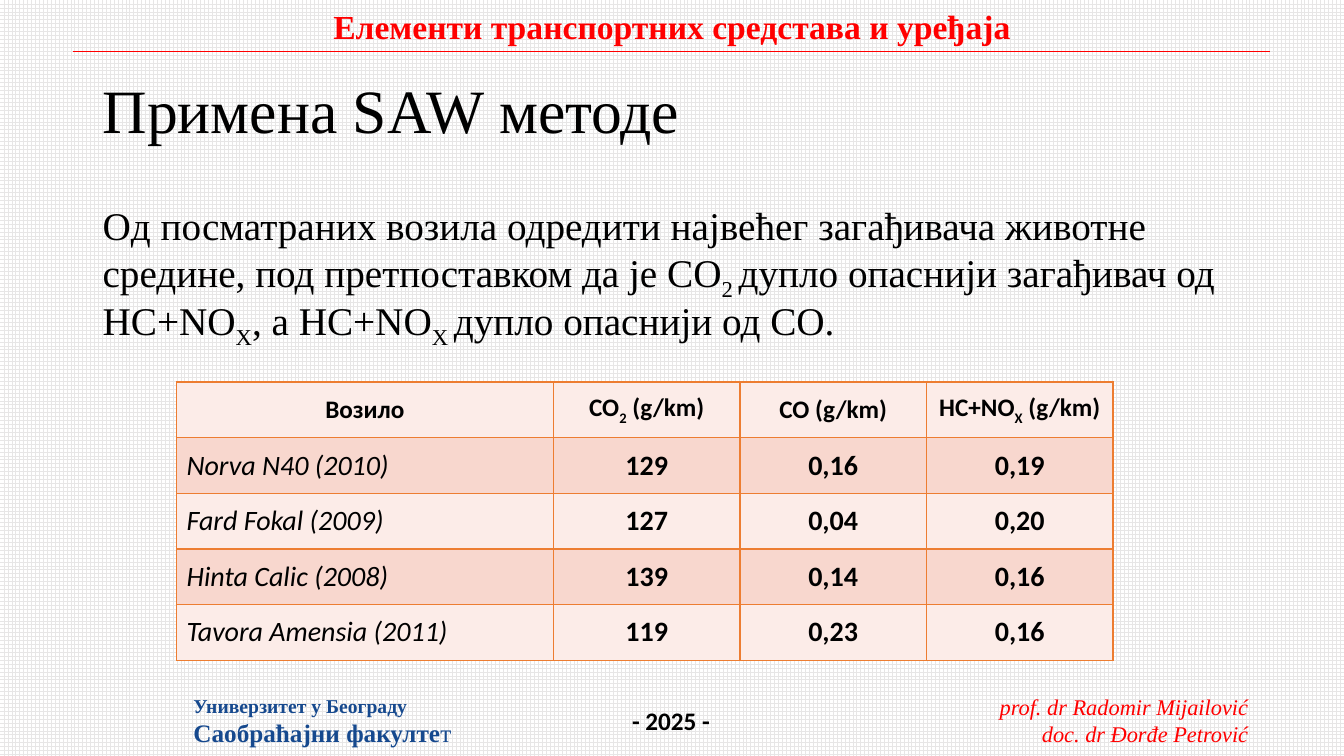
from dataclasses import dataclass, replace

from lxml import etree
from pptx import Presentation
from pptx import util as u
from pptx.dml.color import RGBColor
from pptx.enum import dml, shapes, text
from pptx.oxml import ns

WIDTH, HEIGHT = u.Inches(13.33), u.Inches(7.5)
LEFT, CENTER, RIGHT = text.PP_ALIGN.LEFT, text.PP_ALIGN.CENTER, text.PP_ALIGN.RIGHT


@dataclass(frozen=True)
class Style:
    size: int
    color: str = "000000"
    font: str = "Times New Roman"
    bold: bool = False
    italic: bool = False


class Theme:
    red = "FF0000"
    grid, paper = "E7E6E6", "FFFFFF"
    border = "ED7D31"
    bands = ("FCECE8", "F8D7CE")
    course = Style(24, red, bold=True)
    title = Style(44)
    task = Style(28)
    authors = Style(16, red, italic=True)
    university = Style(14, "16498E", bold=True)
    faculty = replace(university, size=18)
    faculty_end = replace(faculty, bold=False)
    year = Style(18, font="Calibri", bold=True)
    heading = year
    value = replace(year, size=20)
    vehicle = replace(value, bold=False, italic=True)


def rgb(value):
    return RGBColor.from_string(value)


def across(percent):
    return round(WIDTH * percent / 100)


def down(percent):
    return round(HEIGHT * percent / 100)


def area(left, top, width, height):
    return across(left), down(top), across(width), down(height)


def write(paragraph, content, style, align=LEFT):
    paragraph.alignment = align
    for index, part in enumerate(content.split("_")):
        if not part:
            continue
        run = paragraph.add_run()
        run.text = part
        font = run.font
        font.size, font.name = u.Pt(style.size), style.font
        font.bold, font.italic = style.bold, style.italic
        font.color.rgb = rgb(style.color)
        if index % 2:
            run._r.get_or_add_rPr().set("baseline", "-25000")


def add_text(slide, place, lines, align=LEFT, wrap=False, spacing=None,
             anchor=text.MSO_ANCHOR.TOP):
    frame = slide.shapes.add_textbox(*area(*place)).text_frame
    frame.word_wrap = wrap
    frame.vertical_anchor = anchor
    if not wrap:
        frame.auto_size = text.MSO_AUTO_SIZE.SHAPE_TO_FIT_TEXT
    for index, line in enumerate(lines):
        paragraph = frame.add_paragraph() if index else frame.paragraphs[0]
        paragraph.line_spacing = spacing
        for content, style in line:
            write(paragraph, content, style, align)


def add_rule(slide, start, end, level):
    rule = slide.shapes.add_connector(
        shapes.MSO_CONNECTOR.STRAIGHT, across(start), down(level), across(end), down(level))
    rule.line.color.rgb = rgb(Theme.red)
    rule.line.width = u.Pt(0.5)
    etree.SubElement(rule._element.spPr, ns.qn("a:effectLst"))


def add_borders(cell):
    properties = cell._tc.get_or_add_tcPr()
    for side in ("lnL", "lnR", "lnT", "lnB"):
        border = etree.SubElement(properties, ns.qn(f"a:{side}"), w=str(u.Pt(1)))
        fill = etree.SubElement(border, ns.qn("a:solidFill"))
        etree.SubElement(fill, ns.qn("a:srgbClr"), val=Theme.border)


def add_emissions(slide, place, column_shares, rows):
    table = slide.shapes.add_table(len(rows), len(column_shares), *area(*place)).table
    table.first_row = table.horz_banding = False
    for column, share in zip(table.columns, column_shares):
        column.width = across(share)
    for r, row in enumerate(rows):
        for c, content in enumerate(row):
            cell = table.cell(r, c)
            add_borders(cell)
            cell.fill.solid()
            cell.fill.fore_color.rgb = rgb(Theme.bands[r % 2])
            cell.vertical_anchor = text.MSO_ANCHOR.MIDDLE
            if r == 0:
                style = Theme.heading
            else:
                style = Theme.value if c else Theme.vehicle
            align = LEFT if style is Theme.vehicle else CENTER
            write(cell.text_frame.paragraphs[0], content, style, align)


def paint_background(slide):
    fill = slide.background.fill
    fill.patterned()
    fill.pattern = dml.MSO_PATTERN.LARGE_GRID
    fill.fore_color.rgb = rgb(Theme.grid)
    fill.back_color.rgb = rgb(Theme.paper)


def main():
    deck = Presentation()
    deck.slide_width, deck.slide_height = WIDTH, HEIGHT
    slide = deck.slides.add_slide(deck.slide_layouts[6])
    paint_background(slide)

    add_text(slide, (73.29, 91.07, 20.33, 8.53),
             [[("prof. dr Radomir Mijailović", Theme.authors)],
              [("doc. dr Đorđe Petrović", Theme.authors)]], RIGHT)
    add_rule(slide, 5.4, 94.52, 6.8)
    add_text(slide, (23.78, 0.13, 52.44, 6.67),
             [[("Елементи транспортних средстава и уређаја", Theme.course)]], CENTER)
    add_text(slide, (46.29, 92.67, 7.35, 5.33), [[("- 2025 -", Theme.year)]])
    add_text(slide, (13.65, 91.07, 20.93, 8.53),
             [[("Универзитет у Београду", Theme.university)],
              [("Саобраћајни факулте", Theme.faculty), ("т", Theme.faculty_end)]])

    add_text(slide, (6.9, 5.33, 86.27, 19.33), [[("Примена SAW методе", Theme.title)]],
             wrap=True, spacing=0.9, anchor=text.MSO_ANCHOR.MIDDLE)
    task = ("Oд посматраних возила одредити највећег загађивача животне средине, "
            "под претпоставком да је CO_2 _дупло опаснији загађивач од HC+NO_X_, "
            "a HC+NO_X _дупло опаснији од CO.")
    add_text(slide, (6.9, 26.67, 86.27, 63.47), [[(task, Theme.task)]],
             wrap=True, spacing=0.9)

    add_emissions(slide, (13.13, 50.53, 69.69, 36.8), (28.05, 13.88, 13.88, 13.88), [
        ("Возило", "CO_2_ (g/km)", "CO (g/km)", "HC+NO_X_ (g/km)"),
        ("Norva N40 (2010)", "129", "0,16", "0,19"),
        ("Fard Fokal (2009)", "127", "0,04", "0,20"),
        ("Hinta Calic (2008)", "139", "0,14", "0,16"),
        ("Tavora Amensia (2011)", "119", "0,23", "0,16"),
    ])
    deck.save("out.pptx")


if __name__ == "__main__":
    main()
